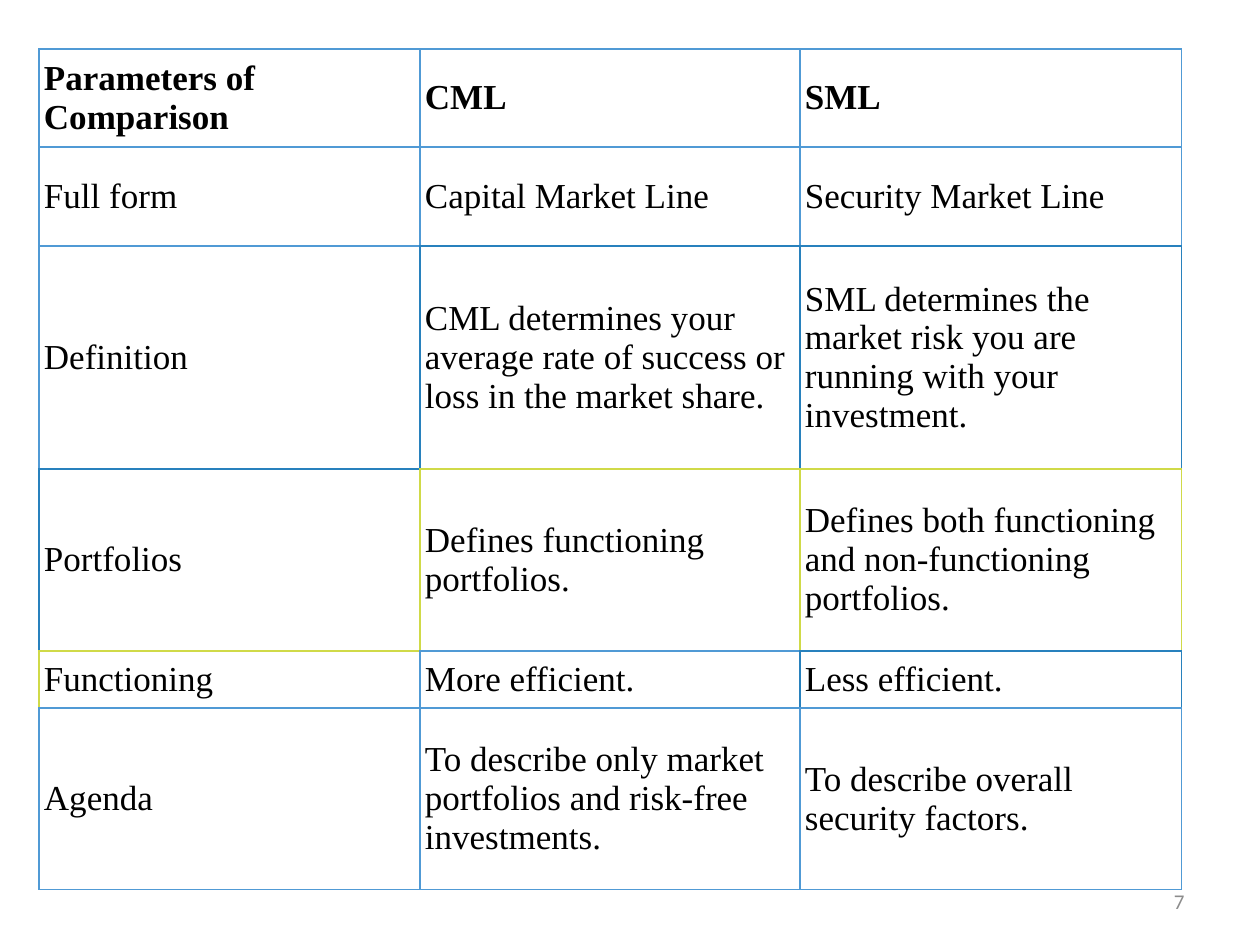
from pptx import Presentation
from pptx.dml.color import RGBColor
from pptx.enum.text import MSO_ANCHOR, PP_ALIGN
from pptx.oxml.ns import qn
from pptx.util import Pt
from lxml.etree import SubElement

PX = 914400 // 126
BLUE, DARK, LIME = "509AD5", "2881BD", "D0DA48"

ROWS = [
    ("Parameters of Comparison", "CML", "SML"),
    ("Full form", "Capital Market Line", "Security Market Line"),
    ("Definition",
     "CML determines your average rate of success or loss in the market share.",
     "SML determines the market risk you are running with your investment."),
    ("Portfolios", "Defines functioning portfolios.",
     "Defines both functioning and non-functioning portfolios."),
    ("Functioning", "More efficient.", "Less efficient."),
    ("Agenda", "To describe only market portfolios and risk-free investments.",
     "To describe overall security factors."),
]
# Colour of each cell's left and top lines
LINES = [
    (BLUE, BLUE, BLUE),
    (BLUE, BLUE, BLUE),
    (BLUE, DARK, DARK),
    (DARK, LIME, LIME),
    (LIME, BLUE, DARK),
    (BLUE, BLUE, BLUE),
]
HEIGHTS = (98, 99, 223, 182, 57, 182)
WIDTHS = (381, 380, 381)
LEFT, TOP, INSET = 39, 49, 5


def rgb(color):
    return RGBColor.from_string(color)


def style(p, font, size, color, bold=False):
    for r in p.runs:
        r.font.name = font
        r.font.size = Pt(size)
        r.font.bold = bold
        r.font.color.rgb = rgb(color)


def set_borders(cell, borders):
    """Draw borders given as (side tag, colour, points), before any fill."""
    tcPr = cell._tc.get_or_add_tcPr()
    for tag, color, width in borders:
        ln = SubElement(tcPr, qn(f"a:{tag}"), w=str(Pt(width)))
        fill = SubElement(ln, qn("a:solidFill"))
        SubElement(fill, qn("a:srgbClr"), val=color)


def cell_borders(i, j):
    """A cell's right and bottom lines take the colour of the next cell."""
    own = LINES[i][j]
    last_row, last_col = i == len(ROWS) - 1, j == len(WIDTHS) - 1
    right = (own, 0.5) if last_col else (LINES[i][j + 1], 1)
    bottom = (own, 0.5) if last_row else (LINES[i + 1][j], 1)
    return [("lnL", own, 1), ("lnR", *right), ("lnT", own, 1), ("lnB", *bottom)]


def add_comparison(s):
    table = s.shapes.add_table(len(ROWS), len(WIDTHS), LEFT * PX, TOP * PX,
                               sum(WIDTHS) * PX, sum(HEIGHTS) * PX).table
    table.horz_banding = False
    for column, width in zip(table.columns, WIDTHS):
        column.width = width * PX
    for i, texts in enumerate(ROWS):
        table.rows[i].height = HEIGHTS[i] * PX
        for j, text in enumerate(texts):
            cell = table.cell(i, j)
            cell.text = text
            cell.vertical_anchor = MSO_ANCHOR.MIDDLE
            cell.margin_left = cell.margin_right = INSET * PX
            cell.margin_top = cell.margin_bottom = INSET * PX
            style(cell.text_frame.paragraphs[0], "Times New Roman", 20,
                  "000000", bold=i == 0)
            set_borders(cell, cell_borders(i, j))
            cell.fill.background()


def add_page_number(s):
    tf = s.shapes.add_textbox(903 * PX, 876 * PX, 294 * PX, 50 * PX).text_frame
    tf.word_wrap = True
    tf.vertical_anchor = MSO_ANCHOR.MIDDLE
    tf.text = "7"
    p = tf.paragraphs[0]
    p.alignment = PP_ALIGN.RIGHT
    style(p, "Calibri", 12, "8C8C8C")


def main():
    prs = Presentation()
    prs.slide_width, prs.slide_height = 1260 * PX, 945 * PX
    s = prs.slides.add_slide(prs.slide_layouts[6])
    add_page_number(s)
    add_comparison(s)
    prs.save("out.pptx")


if __name__ == "__main__":
    main()
